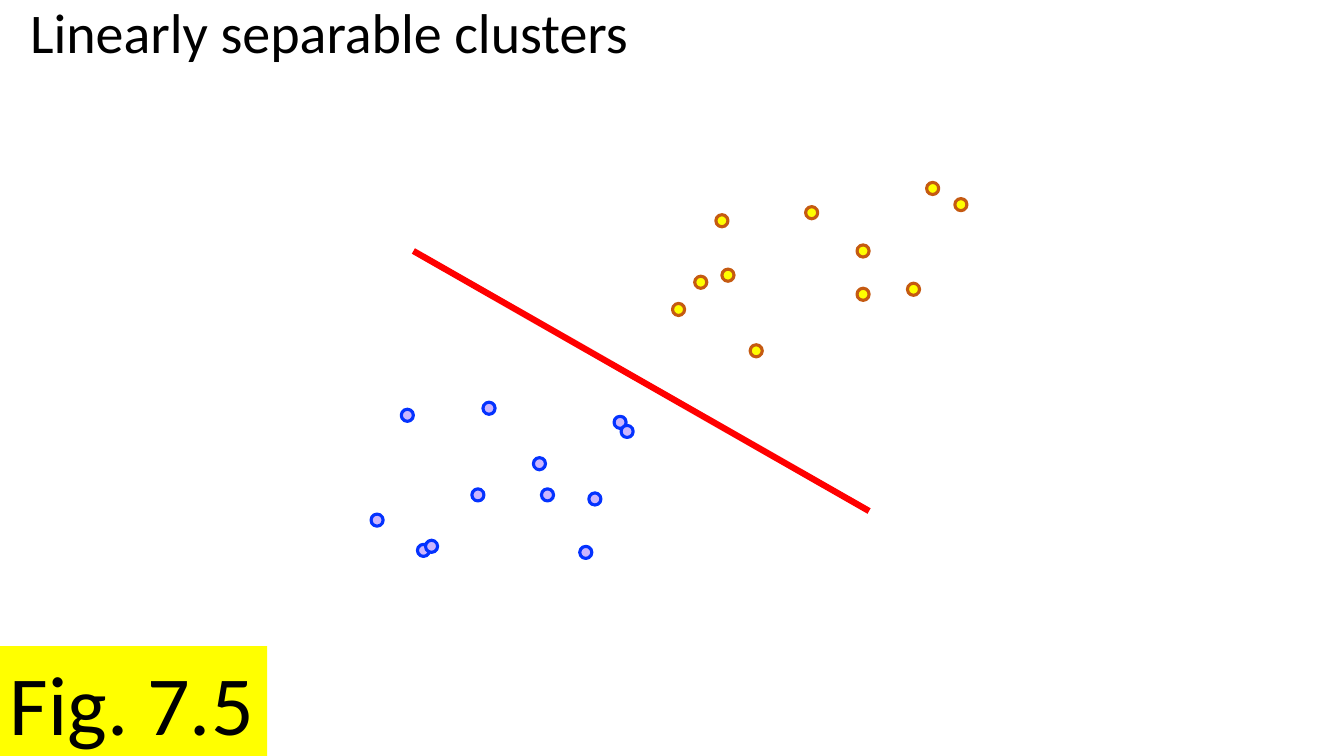
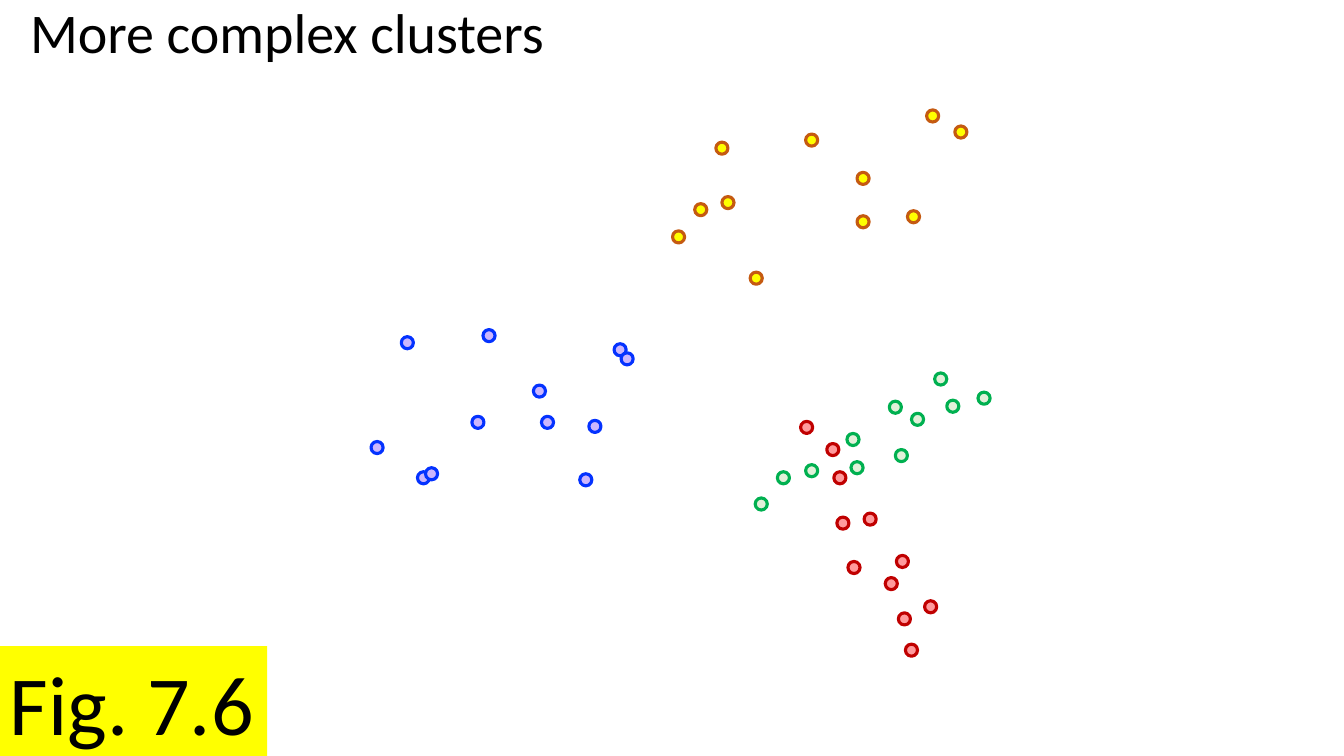
from pptx import Presentation
from pptx.dml.color import RGBColor
from pptx.enum.shapes import MSO_CONNECTOR as Connector, MSO_SHAPE as Shape
from pptx.enum.text import MSO_ANCHOR as Anchor, PP_ALIGN as Align
from pptx.oxml.ns import qn
from pptx.util import Emu, Pt

PX = 9144  # 100 px to the inch
FONT = "Calibri"
BLACK, YELLOW, RED = "000000", "FFFF00", "FF0000"
DOT_SIZE, DOT_LINE = 12, 2.25
TITLE_BOX = (20, 0, 1277, 171)
LABEL_BOX = (0, 641, 265, 111)

# Top left corner of each dot
BLUE_CLUSTER = {
    "fill": "CCB6FD", "line": "0432FF",
    "dots": [(609, 413), (368, 510), (414, 540), (422, 536), (616, 422), (575, 542),
             (468, 485), (529, 454), (537, 485), (584, 489), (398, 406), (479, 399)],
}
YELLOW_CLUSTER = {
    "fill": YELLOW, "line": "C55A11",
    "dots": [(667, 301), (689, 274), (744, 342), (716, 267), (919, 181), (799, 205),
             (900, 281), (850, 243), (947, 197), (710, 213), (850, 286)],
}
GREEN_CLUSTER = {
    "fill": "E2F0D9", "line": "00B050",
    "dots": [(749, 494), (771, 468), (904, 410), (799, 461), (927, 370), (882, 398),
             (888, 446), (844, 458), (970, 389), (840, 430), (939, 397)],
}
RED_CLUSTER = {
    "fill": "FF9A9C", "line": "C00000",
    "dots": [(794, 418), (820, 440), (878, 573), (827, 468), (917, 596), (889, 551),
             (841, 557), (830, 513), (898, 639), (857, 509), (891, 608)],
}

# Each cluster comes with its vertical shift
SLIDES = [
    {"title": "Linearly separable clusters", "label": "Fig. 7.5",
     "separator": (410, 249, 862, 507),
     "clusters": [(BLUE_CLUSTER, 0), (YELLOW_CLUSTER, 0)]},
    {"title": "More complex clusters", "label": "Fig. 7.6",
     "separator": None,
     "clusters": [(BLUE_CLUSTER, -72), (YELLOW_CLUSTER, -72),
                  (GREEN_CLUSTER, 0), (RED_CLUSTER, 0)]},
]


def px(*lengths):
    return [Emu(length * PX) for length in lengths]


def color(value):
    return RGBColor.from_string(value)


def write(shape, text, *, size, wrap=True, anchor=Anchor.TOP, spacing=None):
    frame = shape.text_frame
    frame.word_wrap = wrap
    frame.vertical_anchor = anchor
    paragraph = frame.paragraphs[0]
    paragraph.alignment = Align.LEFT
    paragraph.line_spacing = spacing
    run = paragraph.add_run()
    run.text = text
    run.font.name = FONT
    run.font.size = Pt(size)
    run.font.color.rgb = color(BLACK)


def add_filled(shapes, kind, box, fill, line=None):
    shape = shapes.add_shape(kind, *px(*box))
    shape.shadow.inherit = False
    shape.fill.solid()
    shape.fill.fore_color.rgb = color(fill)
    if line:
        shape.line.color.rgb = color(line)
        shape.line.width = Pt(DOT_LINE)
    else:
        shape.line.fill.background()
    return shape


def add_cluster(slide, cluster, shift):
    group = slide.shapes.add_group_shape()
    for left, top in cluster["dots"]:
        add_filled(group.shapes, Shape.OVAL, (left, top + shift, DOT_SIZE, DOT_SIZE),
                   cluster["fill"], cluster["line"])


def add_separator(slide, ends):
    line = slide.shapes.add_connector(Connector.STRAIGHT, *px(*ends))
    line.line.color.rgb = color(RED)
    line.line.width = Pt(4.5)
    properties = line._element.spPr
    properties.append(properties.makeelement(qn("a:effectLst"), {}))


def build_slide(presentation, content):
    slide = presentation.slides.add_slide(presentation.slide_layouts[6])
    if content["separator"]:
        add_separator(slide, content["separator"])
    for cluster, shift in content["clusters"]:
        add_cluster(slide, cluster, shift)
    label = add_filled(slide.shapes, Shape.RECTANGLE, LABEL_BOX, YELLOW)
    write(label, content["label"], size=60, wrap=False)
    title = slide.shapes.add_textbox(*px(*TITLE_BOX))
    write(title, content["title"], size=40, spacing=0.9)


def main():
    presentation = Presentation()
    presentation.slide_width, presentation.slide_height = px(1333, 750)
    for content in SLIDES:
        build_slide(presentation, content)
    presentation.save("out.pptx")


if __name__ == "__main__":
    main()
